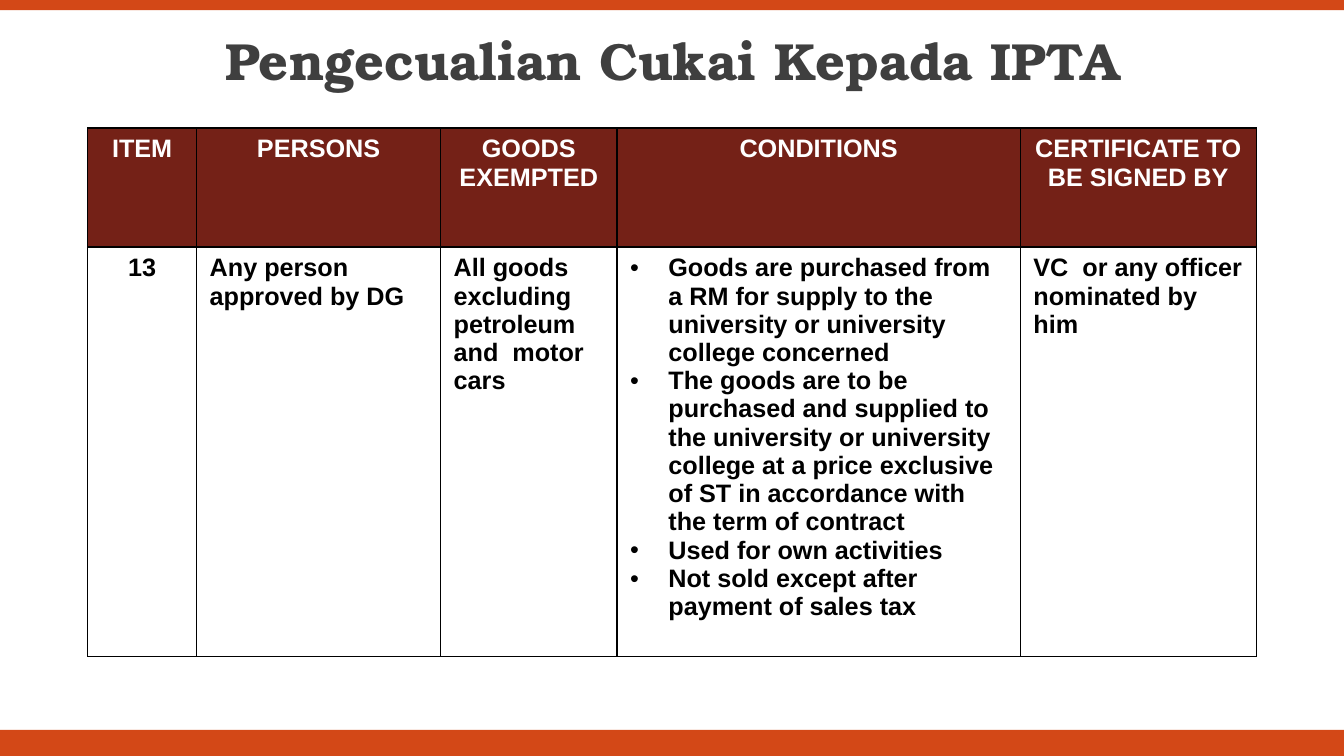
import pptx
import pptx.dml.color
import pptx.enum.shapes
import pptx.enum.text
import pptx.oxml
import pptx.oxml.ns
import pptx.util
from pptx.util import Inches

RGBColor = pptx.dml.color.RGBColor
ORANGE = RGBColor(0xD3, 0x48, 0x17)
MAROON = RGBColor(0x74, 0x21, 0x17)
GREY = RGBColor(0x3F, 0x3F, 0x3F)
WHITE = RGBColor(0xFF, 0xFF, 0xFF)
BLACK = RGBColor(0, 0, 0)
ALIGN = pptx.enum.text.PP_ALIGN
ANCHOR = pptx.enum.text.MSO_ANCHOR
WIDTH, HEIGHT = 13.33, 7.5

COLS = [1.08, 2.42, 1.75, 4, 2.34]
ROWS = [1.18, 4.06]
HEADS = ["ITEM", "PERSONS", "GOODS EXEMPTED", "CONDITIONS", "CERTIFICATE TO BE SIGNED BY"]
TERMS = [
    "Goods are purchased from a RM for supply to the  university or university college concerned",
    "The goods are to be purchased and supplied to the university or university college "
    "at a price exclusive of ST in accordance with the term of contract",
    "Used for own activities",
    "Not sold except after payment of sales tax",
]
ENTRY = [
    "13",
    "Any person approved by DG",
    "All goods excluding petroleum and  motor cars",
    "\n".join(TERMS),
    "VC  or any officer nominated by him",
]


def style(para, name, size, color):
    """Set the bold font of a paragraph."""
    font = para.font
    font.name, font.size, font.bold = name, pptx.util.Pt(size), True
    font.color.rgb = color


def add_bar(slide, top, height):
    """Draw a full-width orange bar."""
    kind = pptx.enum.shapes.MSO_SHAPE.RECTANGLE
    bar = slide.shapes.add_shape(kind, 0, Inches(top), Inches(WIDTH), Inches(height))
    bar.shadow.inherit = False
    bar.fill.solid()
    bar.fill.fore_color.rgb = ORANGE
    bar.line.fill.background()


def add_title(slide, text, left, top, width, height):
    """Place the heading in the title placeholder."""
    title = slide.shapes.title
    title.left, title.top = Inches(left), Inches(top)
    title.width, title.height = Inches(width), Inches(height)
    frame = title.text_frame
    frame.auto_size = pptx.enum.text.MSO_AUTO_SIZE.NONE
    frame.word_wrap = True
    frame.vertical_anchor = ANCHOR.MIDDLE
    frame.text = text
    para = frame.paragraphs[0]
    para.alignment, para.line_spacing = ALIGN.CENTER, 0.9
    style(para, "TeX Gyre Bonum", 37.3, GREY)


def add_bullet(para):
    """Give a paragraph a hanging round bullet."""
    props = para._p.get_or_add_pPr()
    props.set("marL", str(Inches(0.38)))
    props.set("indent", str(-Inches(0.38)))
    space = pptx.oxml.ns.nsdecls("a")
    for tag in (
        f'<a:buClr {space}><a:srgbClr val="{BLACK}"/></a:buClr>',
        f'<a:buFont {space} typeface="Arial"/>',
        f'<a:buChar {space} char="•"/>',
    ):
        props.append(pptx.oxml.parse_xml(tag))


def add_edges(cell):
    """Draw thin black lines on all four sides of a cell."""
    props = cell._tc.get_or_add_tcPr()
    space = pptx.oxml.ns.nsdecls("a")
    for side in "LRTB":
        props.append(pptx.oxml.parse_xml(
            f'<a:ln{side} {space} w="{pptx.util.Pt(1)}"><a:solidFill>'
            f'<a:srgbClr val="{BLACK}"/></a:solidFill></a:ln{side}>'))


def fill_cell(cell, text, back, color, center):
    """Write and format one table cell."""
    cell.margin_left = cell.margin_right = Inches(0.13)
    cell.margin_top = cell.margin_bottom = Inches(0.07)
    cell.vertical_anchor = ANCHOR.TOP
    add_edges(cell)
    cell.fill.solid()
    cell.fill.fore_color.rgb = back
    cell.text = text
    paras = cell.text_frame.paragraphs
    for para in paras:
        para.alignment = ALIGN.CENTER if center else ALIGN.LEFT
        if len(paras) > 1:
            add_bullet(para)
        style(para, "Arial", 18, color)


def add_grid(slide, left, top):
    """Build the exemption table from its top left corner."""
    frame = slide.shapes.add_table(
        len(ROWS), len(COLS), Inches(left), Inches(top), Inches(sum(COLS)), Inches(sum(ROWS)))
    table = frame.table
    for row, height in zip(table.rows, ROWS):
        row.height = Inches(height)
    for col, width in enumerate(COLS):
        table.columns[col].width = Inches(width)
        fill_cell(table.cell(0, col), HEADS[col], MAROON, WHITE, True)
        fill_cell(table.cell(1, col), ENTRY[col], WHITE, BLACK, col == 0)


def main():
    """Build and save the slide."""
    deck = pptx.Presentation()
    deck.slide_width, deck.slide_height = Inches(WIDTH), Inches(HEIGHT)
    slide = deck.slides.add_slide(deck.slide_layouts[5])
    add_bar(slide, HEIGHT - 0.26, 0.26)
    add_bar(slide, 0, 0.1)
    add_title(slide, "Pengecualian Cukai Kepada IPTA", 0, 0, WIDTH, 1.26)
    add_grid(slide, 0.87, 1.27)
    deck.save("out.pptx")


if __name__ == "__main__":
    main()
